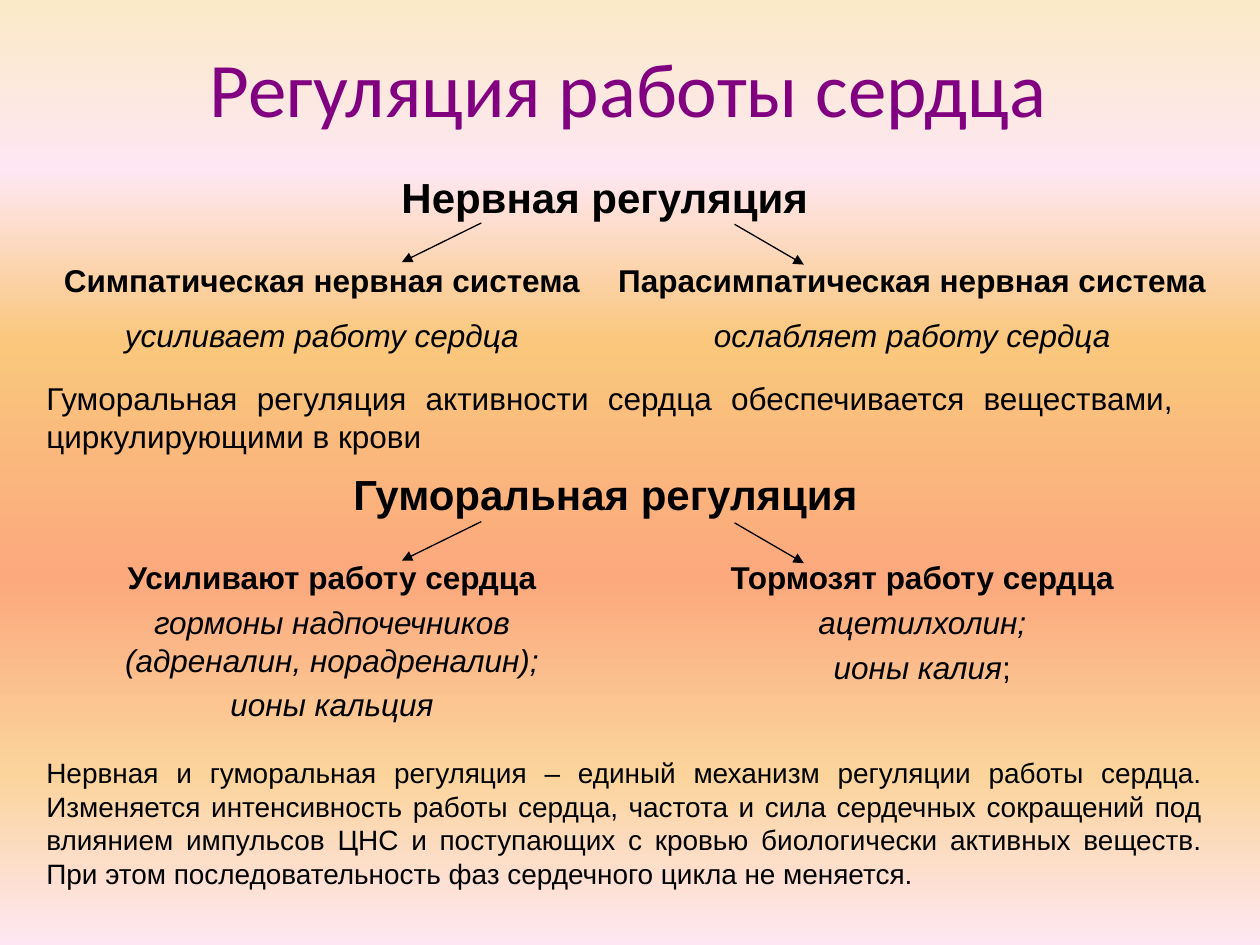
"""Builds a slide on the nervous and humoral regulation of the heart."""
import pptx
import pptx.dml.color
import pptx.enum.shapes
import pptx.enum.text
import pptx.oxml
import pptx.oxml.ns
import pptx.util
from pptx.util import Inches

ALIGN = pptx.enum.text.PP_ALIGN
SKY = [(0, "FBEAC7"), (18, "FEE7F2"), (36, "FAC77D"),
       (61, "FBA97D"), (82, "FBD49C"), (100, "FEE7F2")]


def color(value):
    return pptx.dml.color.RGBColor.from_string(value)


def element(tag, **attributes):
    node = pptx.oxml.parse_xml(f"<{tag} {pptx.oxml.ns.nsdecls('a')}/>")
    for name, value in attributes.items():
        node.set(name, value)
    return node


class HeartSlide:
    ink = "000000"
    accent = "800080"
    body_font = "Arial"
    title_font = "Calibri"

    def __init__(self, presentation):
        self.slide = presentation.slides.add_slide(presentation.slide_layouts[5])

    def background(self, stops):
        fill = self.slide.background.fill
        fill.gradient()
        fill.gradient_angle = 270
        stop_list = self.slide.background._cSld.find(".//" + pptx.oxml.ns.qn("a:gsLst"))
        for old in list(stop_list):
            stop_list.remove(old)
        for percent, value in stops:
            stop = element("a:gs", pos=str(percent * 1000))
            stop.append(element("a:srgbClr", val=value))
            stop_list.append(stop)

    def font(self, font, size, value, name, bold=False, italic=False):
        font.size = pptx.util.Pt(size)
        font.color.rgb = color(value)
        font.name = name
        font.bold = bold
        font.italic = italic

    def title(self, wording, left, top, width, height):
        title = self.slide.shapes.title
        title.left, title.top = Inches(left), Inches(top)
        title.width, title.height = Inches(width), Inches(height)
        title.text_frame.text = wording
        title.text_frame.vertical_anchor = pptx.enum.text.MSO_ANCHOR.MIDDLE
        paragraph = title.text_frame.paragraphs[0]
        paragraph.alignment = ALIGN.CENTER
        self.font(paragraph.font, 44, self.accent, self.title_font)

    def frame(self, left, top, width, height):
        box = self.slide.shapes.add_textbox(
            Inches(left), Inches(top), Inches(width), Inches(height))
        box.text_frame.word_wrap = True
        box.text_frame.auto_size = pptx.enum.text.MSO_AUTO_SIZE.SHAPE_TO_FIT_TEXT
        return box.text_frame

    def text(self, wording, left, top, width, height, size, align, bold=False):
        paragraph = self.frame(left, top, width, height).paragraphs[0]
        paragraph.text = wording
        paragraph.alignment = align
        self.font(paragraph.font, size, self.ink, self.body_font, bold)

    def branch(self, heading, effects, left, top, width, height):
        """Each effect is its wording and the space before it in points."""
        frame = self.frame(left, top, width, height)
        for index, (wording, space) in enumerate([(heading, 0)] + effects):
            paragraph = frame.add_paragraph() if index else frame.paragraphs[0]
            paragraph.text = wording
            paragraph.alignment = ALIGN.CENTER
            paragraph.space_before = pptx.util.Pt(space)
            self.font(paragraph.font, 18, self.ink, self.body_font,
                      bold=index == 0, italic=index > 0)
        return frame

    def arrow(self, x1, y1, x2, y2):
        line = self.slide.shapes.add_connector(
            pptx.enum.shapes.MSO_CONNECTOR.STRAIGHT,
            Inches(x1), Inches(y1), Inches(x2), Inches(y2))
        line.line.color.rgb = color(self.ink)
        line.line.width = pptx.util.Pt(0.75)
        line.line._get_or_add_ln().append(element("a:tailEnd", type="triangle"))
        line._element.spPr.append(element("a:effectLst"))

    def fork(self, top):
        self.arrow(3.82, top, 3.19, top + 0.31)
        self.arrow(5.83, top + 0.01, 6.38, top + 0.33)


def main():
    presentation = pptx.Presentation()
    presentation.slide_width, presentation.slide_height = Inches(10), Inches(7.5)
    heart = HeartSlide(presentation)
    heart.background(SKY)
    heart.title("Регуляция работы сердца", 0.48, 0.11, 9.02, 1.16)

    heart.text("Нервная регуляция", 3.03, 1.31, 3.54, 0.5, 24, ALIGN.CENTER, bold=True)
    heart.branch("Симпатическая нервная система",
                 [("усиливает работу сердца", 10)], 0.35, 2.02, 4.41, 0.85)
    heart.branch("Парасимпатическая нервная система",
                 [("ослабляет работу сердца", 10)], 4.76, 2.02, 4.96, 0.85)
    heart.fork(1.77)

    heart.text("Гуморальная регуляция активности сердца обеспечивается веществами, "
               "циркулирующими в крови", 0.27, 2.96, 9.14, 0.7, 18, ALIGN.JUSTIFY)
    heart.text("Гуморальная регуляция", 2.48, 3.67, 4.65, 0.5, 24, ALIGN.CENTER, bold=True)
    heart.branch("Усиливают работу сердца",
                 [("гормоны надпочечников", 4), ("(адреналин, норадреналин);", 0),
                  ("ионы кальция", 4)], 0.43, 4.38, 4.41, 1.42)
    inhibitors = heart.branch("Тормозят работу сердца",
                              [("ацетилхолин;", 4), ("ионы калия", 4)],
                              4.84, 4.38, 4.96, 1.12)
    semicolon = inhibitors.paragraphs[-1].add_run()
    semicolon.text = ";"
    semicolon.font.italic = False
    heart.fork(4.14)

    heart.text("Нервная и гуморальная регуляция – единый механизм регуляции работы сердца. "
               "Изменяется интенсивность работы сердца, частота и сила сердечных сокращений "
               "под влиянием импульсов ЦНС и поступающих с кровью биологически активных "
               "веществ. При этом последовательность фаз сердечного цикла не меняется.",
               0.27, 5.95, 9.37, 1.17, 16, ALIGN.JUSTIFY)
    presentation.save("out.pptx")


if __name__ == "__main__":
    main()
